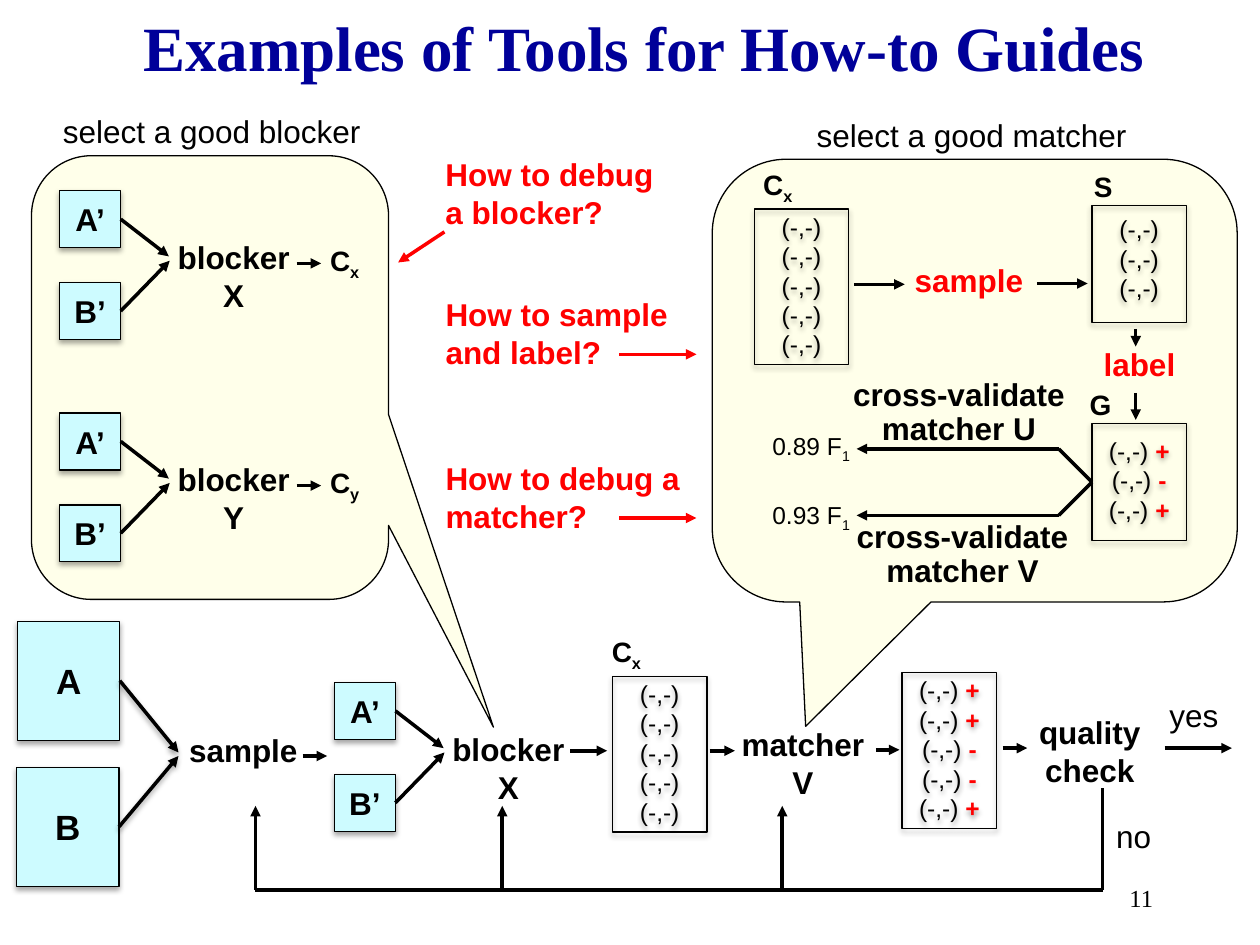
from dataclasses import dataclass
from typing import Any

from lxml import etree
from pptx import Presentation
from pptx.dml.color import RGBColor
from pptx.enum import shapes, text
from pptx.oxml import ns
from pptx.util import Pt

BLACK = RGBColor(0, 0, 0)
RED = RGBColor(0xFF, 0, 0)
NAVY = RGBColor(0, 0, 0x99)
CREAM = RGBColor(0xFF, 0xFF, 0xEA)
AQUA = RGBColor(0xCD, 0xFB, 0xFF)
CENTER, LEFT, RIGHT = text.PP_ALIGN.CENTER, text.PP_ALIGN.LEFT, text.PP_ALIGN.RIGHT
TOP, MIDDLE = text.MSO_ANCHOR.TOP, text.MSO_ANCHOR.MIDDLE
RIGHT_SIDE, LEFT_SIDE = 3, 1


def add_effects(shape, shadowed):
    effects = etree.SubElement(shape._element.spPr, ns.qn("a:effectLst"))
    if shadowed:
        outer = etree.SubElement(effects, ns.qn("a:outerShdw"), blurRad=str(Pt(3.1)),
                                 dist=str(Pt(1.8)), dir="5400000", rotWithShape="0")
        shade = etree.SubElement(outer, ns.qn("a:srgbClr"), val="000000")
        etree.SubElement(shade, ns.qn("a:alpha"), val="35000")


def write(frame, lines, size=18, bold=True, color=BLACK, align=CENTER, anchor=TOP,
          font="Arial", spacing=None, insets=(7.2, 3.6)):
    side, top = insets
    layout = {"word_wrap": True, "vertical_anchor": anchor, "margin_left": Pt(side),
              "margin_right": Pt(side), "margin_top": Pt(top), "margin_bottom": Pt(top)}
    for name, value in layout.items():
        setattr(frame, name, value)
    for number, line in enumerate(lines):
        paragraph = frame.paragraphs[0] if number == 0 else frame.add_paragraph()
        paragraph.alignment = align
        paragraph.line_spacing = spacing
        for words, role in [(line, "")] if isinstance(line, str) else line:
            run = paragraph.add_run()
            run.text = words
            marked = role == "mark"
            for name, value in {"name": font, "size": Pt(size), "bold": bold or marked}.items():
                setattr(run.font, name, value)
            run.font.color.rgb = RED if marked else color
            if role == "sub":
                run._r.get_or_add_rPr().set("baseline", "-25000")


@dataclass
class Area:
    slide: Any
    left: float
    top: float

    def at(self, x, y):
        return Pt(self.left + x), Pt(self.top + y)

    def label(self, x, y, width, height, *lines, **style):
        holder = self.slide.shapes.add_textbox(*self.at(x, y), Pt(width), Pt(height))
        write(holder.text_frame, lines, **style)

    def block(self, x, y, width, height, fill=None, kind=shapes.MSO_SHAPE.RECTANGLE,
              shadowed=True):
        block = self.slide.shapes.add_shape(kind, *self.at(x, y), Pt(width), Pt(height))
        if fill is None:
            block.fill.background()
        else:
            block.fill.solid()
            block.fill.fore_color.rgb = fill
        block.line.color.rgb = BLACK
        block.line.width = Pt(0.75)
        if shadowed:
            add_effects(block, True)
        else:
            block.shadow.inherit = False
        return block

    def table_box(self, x, y, width, height, name, size=18):
        box = self.block(x, y, width, height, AQUA)
        write(box.text_frame, [name], size=size, anchor=MIDDLE, insets=(0, 0))
        return box

    def pairs(self, x, y, height, marks, inset=1.5):
        box = self.block(x, y, 54, height)
        lines = [[("(-,-) ", ""), (mark, "mark")] if mark.strip() else "(-,-)" for mark in marks]
        write(box.text_frame, lines, size=14, bold=False, insets=(0, inset))
        return box

    def set_name(self, x, y, name, index=""):
        self.label(x, y, 35, 27, [(name, ""), (index, "sub")] if index else name,
                   size=16, align=LEFT)

    def callout(self, width, height, tail):
        bubble = self.block(0, 0, width, height, CREAM,
                            shapes.MSO_SHAPE.ROUNDED_RECTANGULAR_CALLOUT, shadowed=False)
        for number, value in enumerate((*tail, 0.167)):
            bubble.adjustments[number] = value

    def line(self, start, end, color=BLACK, arrow=True, shadowed=False, source=None,
             side=RIGHT_SIDE):
        link = self.slide.shapes.add_connector(
            shapes.MSO_CONNECTOR.STRAIGHT, *self.at(*start), *self.at(*end))
        if source is not None:
            link.begin_connect(source, side)
        link.line.color.rgb = color
        link.line.width = Pt(2)
        if arrow:
            etree.SubElement(link.line._get_or_add_ln(), ns.qn("a:tailEnd"), type="triangle")
        add_effects(link, shadowed)


def draw_blocker(slide, left, top, name, result=None):
    area = Area(slide, left, top)
    for table, y, tip in (("A’", 0, (62.5, 37.5)), ("B’", 52.5, (63, 40))):
        box = area.table_box(0, y, 35, 32.5, table)
        area.line((35, y + 16.25), tip, source=box)
    area.label(59, 23.5, 81, 51, f"blocker {name}")
    if result:
        area.line((135.5, 41.5), (149.5, 41.5))
        area.set_name(147.5, 26.5, "C", result)


def draw_blocker_panel(slide, left, top):
    area = Area(slide, left, top)
    area.callout(204, 253.5, (0.794, 0.788))
    area.label(-12, -28.5, 230, 29, "select a good blocker", bold=False)
    for y, name, result in ((20, "X", "x"), (147, "Y", "y")):
        draw_blocker(slide, left + 16, top + y, name, result)


def draw_matcher_panel(slide, left, top):
    area = Area(slide, left, top)
    area.callout(300, 253, (-0.322, 0.781))
    area.label(41, -28, 214.5, 29, "select a good matcher", bold=False)
    area.set_name(22, 1, "C", "x")
    area.set_name(211, 2.5, "S")
    area.set_name(208.5, 127, "G")
    area.pairs(24, 28.5, 89, " " * 5)
    area.pairs(217, 26.5, 67, " " * 3, inset=5)
    labelled = area.pairs(217, 151, 67, "+-+", inset=7)
    area.label(108.5, 54.5, 79, 29, "sample", color=RED, align=LEFT)
    area.label(216.5, 102.5, 68, 29, "label", color=RED, align=LEFT)
    for start, end in (((81, 71.5), (110, 71.5)), ((185.5, 71), (214.5, 71)),
                       ((242, 97), (242, 107)), ((242, 133.5), (242, 149))):
        area.line(start, end)
    for name, score, x, y, score_y, branch_y in (("U", "0.89 F", 54, 122, 151.5, 165.5),
                                                 ("V", "0.93 F", 56, 203.5, 191, 203.5)):
        area.label(x, y, 174, 47, "cross-validate", f"matcher {name}", spacing=0.9)
        area.label(17, score_y, 79, 24.5, [(score, ""), ("1", "sub")], size=14, bold=False)
        area.line((217, 184.5), (198, branch_y), arrow=False, source=labelled, side=LEFT_SIDE)
        area.line((198, branch_y), (82.5, branch_y))


def draw_questions(slide, left, top):
    area = Area(slide, left, top)
    for y, width, question, start, end in (
            (0, 138, "How to debug a blocker?", (6.5, 47.5), (-20, 65)),
            (80, 151, "How to sample and label?", (106.5, 117.5), (150.5, 117.5)),
            (174, 151, "How to debug a matcher?", (106.5, 211), (150.5, 211))):
        area.label(0, y, width, 51, question, color=RED, align=LEFT)
        area.line(start, end, color=RED)


def draw_feedback(slide, left, top, width, height):
    area = Area(slide, left, top)
    area.line((0, height), (width, height), arrow=False)
    area.line((width, -10), (width, height), arrow=False)
    for x in (0, 141, 301):
        area.line((x, height), (x, 0))
    area.label(452.5, 3, 98.5, 29, "no", bold=False)


def draw_pipeline(slide, left, top):
    area = Area(slide, left, top)
    for name, x, y, tip_y in (("A", 10, 5, 80), ("B", 9.5, 88.5, 82)):
        box = area.table_box(x, y, 58.5, 68, name, size=20)
        area.line((x + 58.5, y + 34), (102, tip_y), source=box, shadowed=True)
    area.label(99.5, 64, 79, 29, "sample")
    draw_blocker(slide, left + 191, top + 40, "X")
    area.set_name(342.5, 9, "C", "x")
    area.pairs(350, 36.5, 89, " " * 5)
    area.label(413.5, 61, 90.5, 51, "matcher V")
    area.pairs(515.5, 34.5, 89, "++--+")
    area.label(562, 54, 121.5, 51, "quality", "check")
    area.label(633, 44, 98.5, 29, "yes", bold=False)
    for start, end, y in ((173, 187, 82), (326, 347, 79), (405.5, 420, 79),
                          (500.5, 514, 78.5), (573, 587, 77.5), (665.5, 704, 77.5)):
        area.line((start, y), (end, y))
    draw_feedback(slide, left + 146, top + 110.5, 484, 48)


def draw_frame(slide, left, top):
    area = Area(slide, left, top)
    area.label(62, 4.5, 612, 44, "Examples of Tools for How-to Guides", size=36, color=NAVY,
               anchor=MIDDLE, font="Times New Roman")
    area.label(516, 501, 150, 36, "11", size=14, bold=False, align=RIGHT,
               font="Times New Roman")


def main():
    deck = Presentation()
    deck.slide_width, deck.slide_height = Pt(720), Pt(540)
    slide = deck.slides.add_slide(deck.slide_layouts[6])
    draw_frame(slide, 0, 0)
    draw_matcher_panel(slide, 407, 91)
    draw_pipeline(slide, 0, 350)
    draw_blocker_panel(slide, 18, 89)
    draw_questions(slide, 247.5, 85)
    deck.save("out.pptx")


if __name__ == "__main__":
    main()
